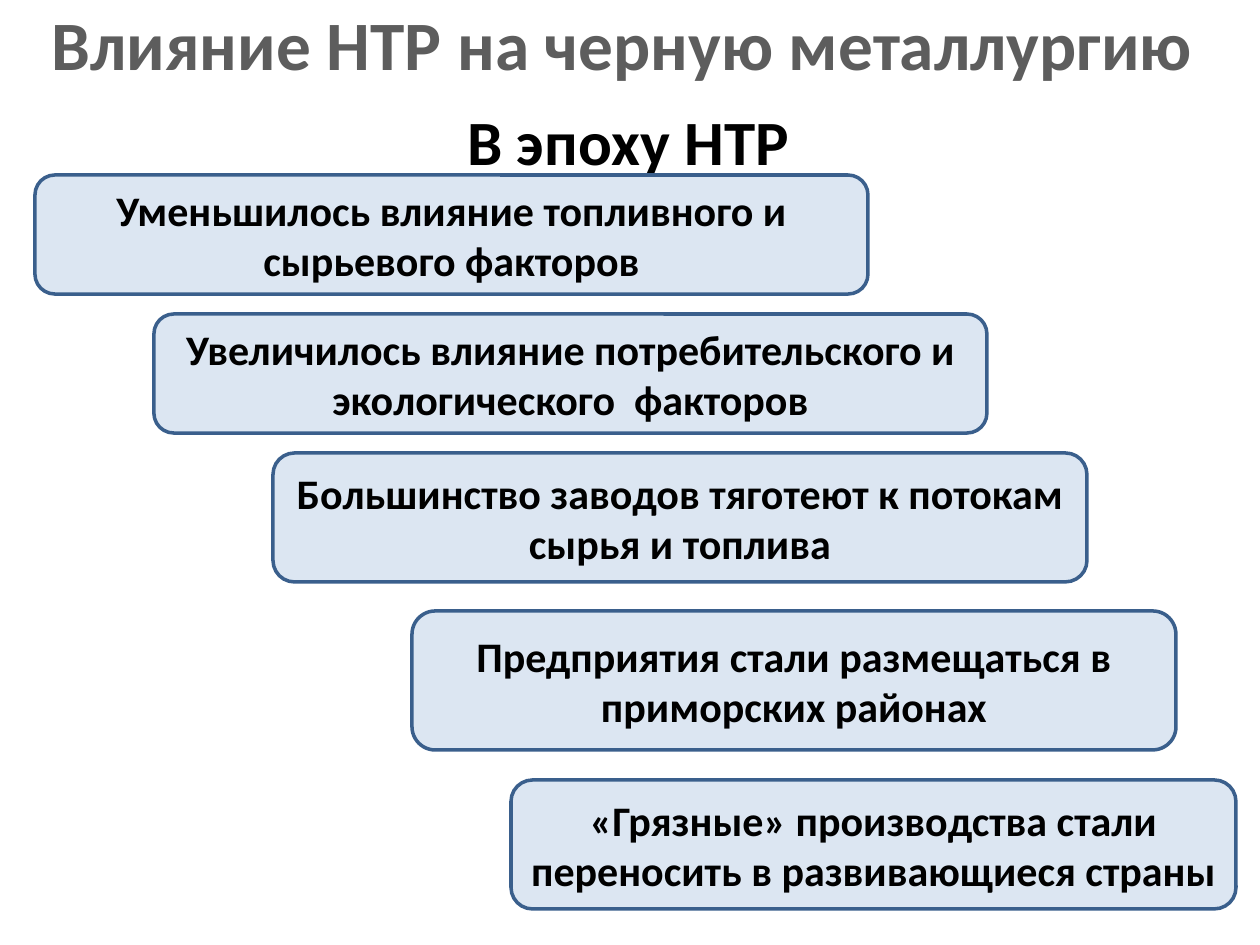
from dataclasses import dataclass

from pptx import Presentation
from pptx.dml.color import RGBColor
from pptx.enum.shapes import MSO_SHAPE
from pptx.enum.text import MSO_ANCHOR, PP_ALIGN
from pptx.util import Emu, Pt

EMU_PER_PX = 914400 / 126


def px(length):
    return Emu(round(length * EMU_PER_PX))


@dataclass(frozen=True)
class Theme:
    font: str = "Calibri"
    title_color: RGBColor = RGBColor(0x5D, 0x5D, 0x5D)
    text_color: RGBColor = RGBColor(0, 0, 0)
    box_fill: RGBColor = RGBColor(0xDC, 0xE6, 0xF2)
    box_line: RGBColor = RGBColor(0x3A, 0x5F, 0x8C)
    title_size: float = 39.6
    subtitle_size: int = 36
    box_size: int = 24
    line_width: int = 2


class SlideBuilder:
    def __init__(self, slide, theme):
        self.slide = slide
        self.theme = theme

    def set_text(self, shape, text, size, color, anchor):
        frame = shape.text_frame
        frame.word_wrap = True
        frame.vertical_anchor = anchor
        paragraph = frame.paragraphs[0]
        paragraph.text = text
        paragraph.alignment = PP_ALIGN.CENTER
        font = paragraph.font
        font.name = self.theme.font
        font.size = Pt(size)
        font.bold = True
        font.color.rgb = color

    def heading(self, bounds, text, size, color, anchor):
        shape = self.slide.shapes.add_textbox(*map(px, bounds))
        self.set_text(shape, text, size, color, anchor)

    def box(self, bounds, text):
        theme = self.theme
        shape = self.slide.shapes.add_shape(
            MSO_SHAPE.ROUNDED_RECTANGLE, *map(px, bounds))
        shape.shadow.inherit = False
        shape.fill.solid()
        shape.fill.fore_color.rgb = theme.box_fill
        shape.line.color.rgb = theme.box_line
        shape.line.width = Pt(theme.line_width)
        self.set_text(shape, text, theme.box_size, theme.text_color, MSO_ANCHOR.MIDDLE)


# Staircase of consequences, from top to bottom
CONSEQUENCES = [
    ((35, 175, 833, 119), "Уменьшилось влияние топливного и сырьевого факторов"),
    ((154, 314, 833, 119),
     "Увеличилось влияние потребительского и экологического  факторов"),
    ((273, 453, 814, 129), "Большинство заводов тяготеют к потокам сырья и топлива"),
    ((412, 611, 764, 139), "Предприятия стали размещаться в приморских районах"),
    ((511, 780, 725, 129),
     "«Грязные» производства стали переносить в развивающиеся страны"),
]


def main():
    presentation = Presentation()
    presentation.slide_width = px(1260)
    presentation.slide_height = px(945)
    slide = presentation.slides.add_slide(presentation.slide_layouts[6])
    theme = Theme()
    builder = SlideBuilder(slide, theme)

    # Headings
    builder.heading((0, 0, 1245, 86), "Влияние НТР на черную металлургию",
                    theme.title_size, theme.title_color, MSO_ANCHOR.MIDDLE)
    builder.heading((35, 96, 1201, 814), "В эпоху НТР ",
                    theme.subtitle_size, theme.text_color, MSO_ANCHOR.TOP)

    # Boxes
    for bounds, text in CONSEQUENCES:
        builder.box(bounds, text)

    presentation.save("out.pptx")


if __name__ == "__main__":
    main()
